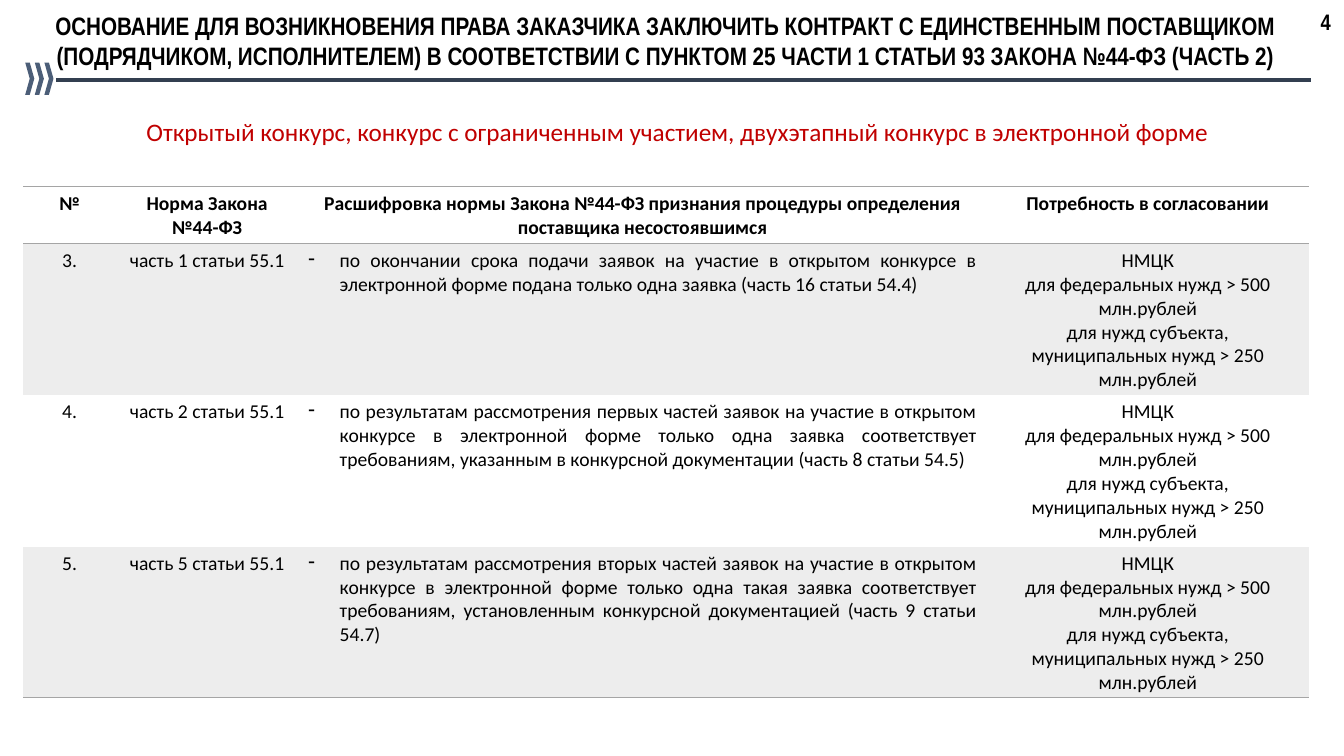
from lxml import etree
from pptx import Presentation
from pptx.dml.color import RGBColor
from pptx.enum.shapes import MSO_CONNECTOR as Connector, MSO_SHAPE as Shape
from pptx.enum.text import PP_ALIGN as Align
from pptx.oxml.ns import qn
from pptx.util import Inches, Pt

TITLE = ("ОСНОВАНИЕ ДЛЯ ВОЗНИКНОВЕНИЯ ПРАВА ЗАКАЗЧИКА ЗАКЛЮЧИТЬ КОНТРАКТ С ЕДИНСТВЕННЫМ "
         "ПОСТАВЩИКОМ (ПОДРЯДЧИКОМ, ИСПОЛНИТЕЛЕМ) В СООТВЕТСТВИИ С ПУНКТОМ 25 ЧАСТИ 1 "
         "СТАТЬИ 93 ЗАКОНА №44-ФЗ (ЧАСТЬ 2)")
SUBTITLE = ("Открытый конкурс, конкурс с ограниченным участием, "
            "двухэтапный конкурс в электронной форме")
PAGE_NUMBER = "4"
HEADER = ["№", "Норма Закона №44-ФЗ",
          "Расшифровка нормы Закона №44-ФЗ признания процедуры определения "
          "поставщика несостоявшимся",
          "Потребность в согласовании"]
APPROVAL = ["НМЦК", "для федеральных нужд > 500 млн.рублей",
            "для нужд субъекта, муниципальных нужд > 250 млн.рублей"]
CASES = [
    ("3.", "часть 1 статьи 55.1",
     "по окончании срока подачи заявок на участие в открытом конкурсе в электронной форме "
     "подана только одна заявка (часть 16 статьи 54.4)"),
    ("4.", "часть 2 статьи 55.1",
     "по результатам рассмотрения первых частей заявок на участие в открытом конкурсе в "
     "электронной форме только одна заявка соответствует требованиям, указанным в "
     "конкурсной документации (часть 8 статьи 54.5)"),
    ("5.", "часть 5 статьи 55.1",
     "по результатам рассмотрения вторых частей заявок на участие в открытом конкурсе в "
     "электронной форме только одна такая заявка соответствует требованиям, установленным "
     "конкурсной документацией (часть 9 статьи 54.7)"),
]

COLORS = {"text": "000000", "accent": "C00000", "rule": "333F50", "chevron": "4C5E78",
          "border": "A5A5A5", "band": "EDEDED"}
COLUMN_WIDTHS = [0.92, 1.81, 6.83, 3.19]
HEADER_HEIGHT, CASE_HEIGHT = 0.57, 1.5
TABLE_LEFT, TABLE_TOP = 0.23, 1.85
DESCRIPTION_COLUMN = 2
CHEVRON_LEFT, CHEVRON_STEP, CHEVRON_COUNT = 0.25, 0.095, 3


def color(name):
    return RGBColor.from_string(COLORS[name])


def write(frame, lines, size=14, font="Calibri", fill="text", bold=False, align=Align.CENTER):
    frame.word_wrap = True
    for index, line in enumerate(lines):
        para = frame.paragraphs[0] if index == 0 else frame.add_paragraph()
        para.alignment = align
        span = para.add_run()
        span.text = line
        span.font.size, span.font.name, span.font.bold = Pt(size), font, bold
        span.font.color.rgb = color(fill)


def add_text(page, place, text, **style):
    box = page.shapes.add_textbox(*map(Inches, place))
    write(box.text_frame, [text], **style)


def add_dash(para):
    """Give the paragraph a hanging dash bullet."""
    props = para._p.get_or_add_pPr()
    props.set("marL", str(Inches(0.31)))
    props.set("indent", str(Inches(-0.31)))
    etree.SubElement(props, qn("a:buFontTx"))
    etree.SubElement(props, qn("a:buChar"), char="-")


def set_borders(cell, drawn):
    """Draw the named sides (T, B) and hide the rest."""
    props = cell._tc.get_or_add_tcPr()
    for side in "LRTB":
        line = etree.SubElement(props, qn(f"a:ln{side}"), w=str(Pt(1)))
        if side in drawn:
            paint = etree.SubElement(line, qn("a:solidFill"))
            etree.SubElement(paint, qn("a:srgbClr"), val=COLORS["border"])
        else:
            etree.SubElement(line, qn("a:noFill"))


def add_heading(page):
    add_text(page, (0.34, 0.05, 12.52, 0.71), TITLE, size=18, font="Arial Narrow", bold=True)
    add_text(page, (13, 0.03, 0.3, 0.37), PAGE_NUMBER, size=16, font="Arial Narrow",
             bold=True, align=Align.LEFT)
    rule = page.shapes.add_connector(Connector.STRAIGHT, Inches(0.56), Inches(0.79),
                                     Inches(13), Inches(0.79))
    rule.line.color.rgb, rule.line.width = color("rule"), Pt(2.75)
    etree.SubElement(rule._element.spPr, qn("a:effectLst"))
    for index in range(CHEVRON_COUNT):
        left = CHEVRON_LEFT + index * CHEVRON_STEP
        chevron = page.shapes.add_shape(Shape.CHEVRON, Inches(left), Inches(0.62),
                                        Inches(0.09), Inches(0.32))
        chevron.shadow.inherit = False
        chevron.fill.solid()
        chevron.fill.fore_color.rgb = color("chevron")
        chevron.line.fill.background()


def add_cases(page):
    rows = [[[text] for text in HEADER]]
    rows += [[[text] for text in case] + [APPROVAL] for case in CASES]
    heights = [HEADER_HEIGHT] + [CASE_HEIGHT] * len(CASES)
    table = page.shapes.add_table(len(rows), len(HEADER), Inches(TABLE_LEFT), Inches(TABLE_TOP),
                                  Inches(sum(COLUMN_WIDTHS)), Inches(sum(heights))).table
    table.first_row = table.horz_banding = False
    for column, width in zip(table.columns, COLUMN_WIDTHS):
        column.width = Inches(width)
    for row_index, (row, height) in enumerate(zip(rows, heights)):
        table.rows[row_index].height = Inches(height)
        is_header = row_index == 0
        borders = {0: "TB", 1: "T", len(rows) - 1: "B"}.get(row_index, "")
        for column_index, lines in enumerate(row):
            cell = table.cell(row_index, column_index)
            set_borders(cell, borders)
            if row_index % 2:
                cell.fill.solid()
                cell.fill.fore_color.rgb = color("band")
            else:
                cell.fill.background()
            is_description = column_index == DESCRIPTION_COLUMN and not is_header
            write(cell.text_frame, lines, bold=is_header,
                  align=Align.JUSTIFY if is_description else Align.CENTER)
            if is_description:
                add_dash(cell.text_frame.paragraphs[0])


def main():
    deck = Presentation()
    deck.slide_width, deck.slide_height = Inches(13.33), Inches(7.5)
    page = deck.slides.add_slide(deck.slide_layouts[6])
    add_heading(page)
    add_cases(page)
    add_text(page, (0.48, 1.11, 12.48, 0.4), SUBTITLE, size=18, fill="accent")
    deck.save("out.pptx")


if __name__ == "__main__":
    main()
